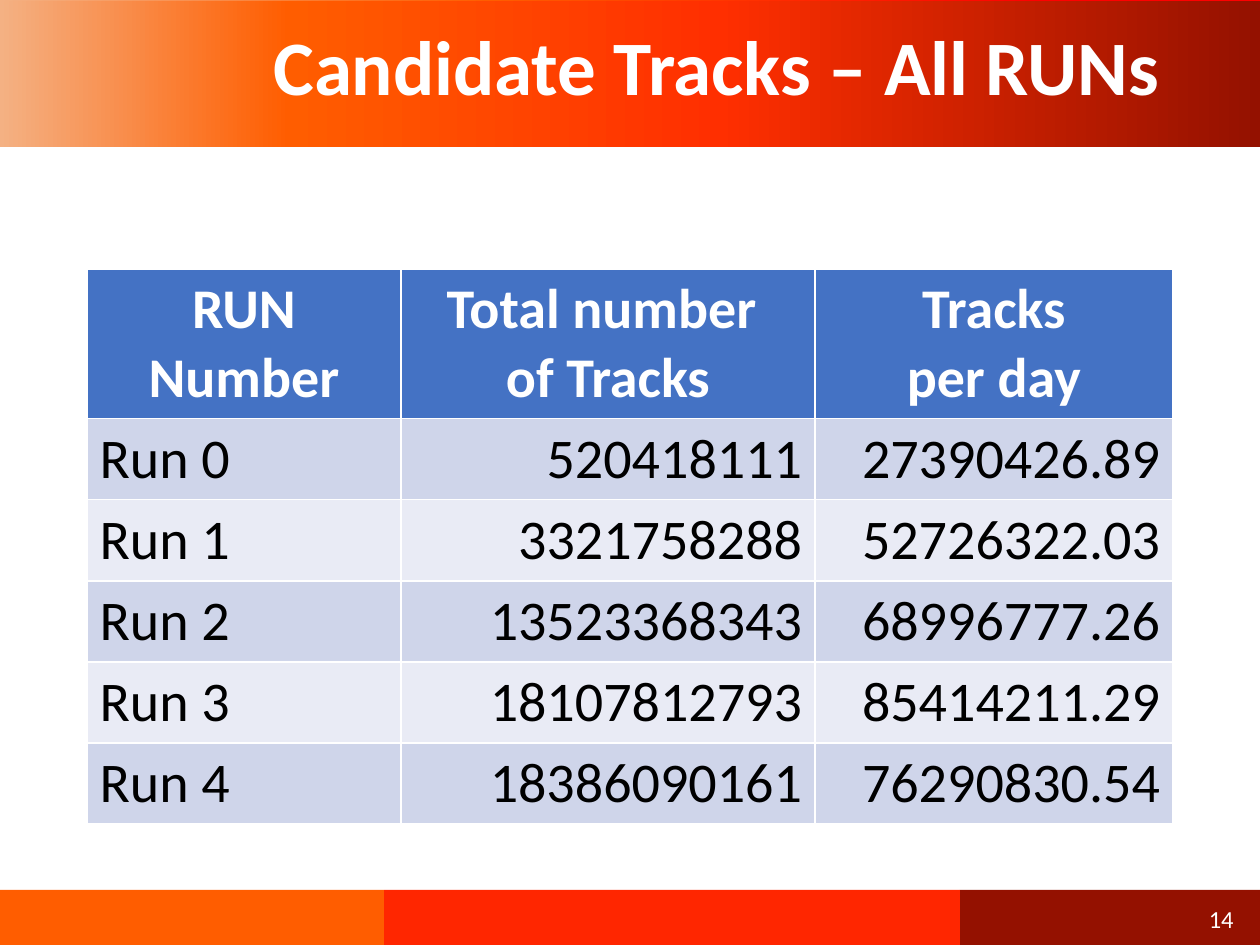
from pptx import Presentation
from pptx.dml.color import RGBColor
from pptx.enum.shapes import MSO_SHAPE
from pptx.enum.text import MSO_ANCHOR, MSO_AUTO_SIZE, PP_ALIGN
from pptx.oxml import parse_xml
from pptx.oxml.ns import nsdecls
from pptx.util import Pt

RECTANGLE = MSO_SHAPE.RECTANGLE
MIDDLE = MSO_ANCHOR.MIDDLE
LEFT, CENTER, RIGHT = PP_ALIGN.LEFT, PP_ALIGN.CENTER, PP_ALIGN.RIGHT

PX_PER_INCH = 126
FONT = "Calibri"
WHITE, BLACK = "FFFFFF", "000000"
ORANGE, RED, DARK_RED = "FF5D00", "FF2600", "941100"
HEADER_FILL = "4472C4"
BAND_FILLS = ["CFD5EA", "E9EBF5"]

BACK_STOPS = [(0, "F4B183"), (35, ORANGE), (74, "FF0000")]
BANNER_STOPS = [(0, "F4B183"), (23, ORANGE), (57, "FF2F00"), (100, DARK_RED)]
FOOTER_BARS = [(960, 300, DARK_RED), (384, 576, RED), (0, 384, ORANGE)]

COLUMN_WIDTHS = [314, 414, 358]
HEADER_HEIGHT, ROW_HEIGHT = 149, 81
HEADERS = ["RUN Number", "Total number \vof Tracks", "Tracks\vper day"]
RUNS = [
    ("Run 0", "520418111", "27390426.89"),
    ("Run 1", "3321758288", "52726322.03"),
    ("Run 2", "13523368343", "68996777.26"),
    ("Run 3", "18107812793", "85414211.29"),
    ("Run 4", "18386090161", "76290830.54"),
]


def px(length):
    return round(length * 914400 / PX_PER_INCH)


def box(left, top, width, height):
    return px(left), px(top), px(width), px(height)


def color(hex_string):
    return RGBColor.from_string(hex_string)


def write(text_frame, text, size, hex_color, alignment, bold=False):
    text_frame.text = text
    paragraph = text_frame.paragraphs[0]
    paragraph.alignment = alignment
    font = paragraph.font
    font.name, font.size, font.bold = FONT, Pt(size), bold
    font.color.rgb = color(hex_color)
    return paragraph


def add_bar(slide, left, top, width, height):
    shape = slide.shapes.add_shape(RECTANGLE, *box(left, top, width, height))
    shape.shadow.inherit = False
    shape.line.fill.background()
    return shape


def add_solid_bar(slide, left, top, width, height, hex_color):
    shape = add_bar(slide, left, top, width, height)
    shape.fill.solid()
    shape.fill.fore_color.rgb = color(hex_color)


def add_gradient_bar(slide, left, top, width, height, stops, angle):
    shape = add_bar(slide, left, top, width, height)
    stop_xml = "".join(
        f'<a:gs pos="{percent * 1000}"><a:srgbClr val="{hex_color}"/></a:gs>'
        for percent, hex_color in stops
    )
    gradient = parse_xml(
        f'<a:gradFill {nsdecls("a")} rotWithShape="1"><a:gsLst>{stop_xml}</a:gsLst>'
        f'<a:lin ang="{angle * 60000}" scaled="0"/></a:gradFill>'
    )
    # The fill belongs right after the position and the geometry.
    shape._element.spPr.insert(2, gradient)


def set_title(slide, text):
    title = slide.shapes.title
    title.left, title.top, title.width, title.height = box(87, 1, 1086, 140)
    frame = title.text_frame
    paragraph = write(frame, text, 44, WHITE, RIGHT, bold=True)
    paragraph.line_spacing = 0.9
    frame.vertical_anchor = MIDDLE
    frame.auto_size = MSO_AUTO_SIZE.NONE
    # Bring the title in front of the banner.
    slide.shapes._spTree.append(title._element)


def fill_cell(cell, text, fill, text_color, alignment, bold=False):
    cell.fill.solid()
    cell.fill.fore_color.rgb = color(fill)
    write(cell.text_frame, text, 32, text_color, alignment, bold)


def add_tracks_table(slide, left, top):
    height = HEADER_HEIGHT + ROW_HEIGHT * len(RUNS)
    table = slide.shapes.add_table(
        len(RUNS) + 1, len(HEADERS), *box(left, top, sum(COLUMN_WIDTHS), height)
    ).table
    for column, width in zip(table.columns, COLUMN_WIDTHS):
        column.width = px(width)
    for row in table.rows:
        row.height = px(ROW_HEIGHT)
    table.rows[0].height = px(HEADER_HEIGHT)

    for column, text in enumerate(HEADERS):
        fill_cell(table.cell(0, column), text, HEADER_FILL, WHITE, CENTER, bold=True)
    for index, run in enumerate(RUNS):
        fill = BAND_FILLS[index % 2]
        for column, text in enumerate(run):
            alignment = RIGHT if column else LEFT
            fill_cell(table.cell(index + 1, column), text, fill, BLACK, alignment)


def add_page_number(slide, number):
    frame = slide.shapes.add_textbox(*box(963, 894, 283, 50)).text_frame
    frame.word_wrap = True
    frame.vertical_anchor = MIDDLE
    write(frame, number, 14, WHITE, RIGHT)


def main():
    presentation = Presentation()
    presentation.slide_width, presentation.slide_height = px(1260), px(945)
    slide = presentation.slides.add_slide(presentation.slide_layouts[5])

    add_gradient_bar(slide, 0, -1, 1260, 146, BACK_STOPS, 45)
    add_gradient_bar(slide, 0, 1, 1260, 146, BANNER_STOPS, 0)
    for left, width, hex_color in FOOTER_BARS:
        add_solid_bar(slide, left, 890, width, 56, hex_color)
    set_title(slide, "Candidate Tracks – All RUNs")
    add_tracks_table(slide, 87, 269)
    add_page_number(slide, "14")

    presentation.save("out.pptx")


if __name__ == "__main__":
    main()
